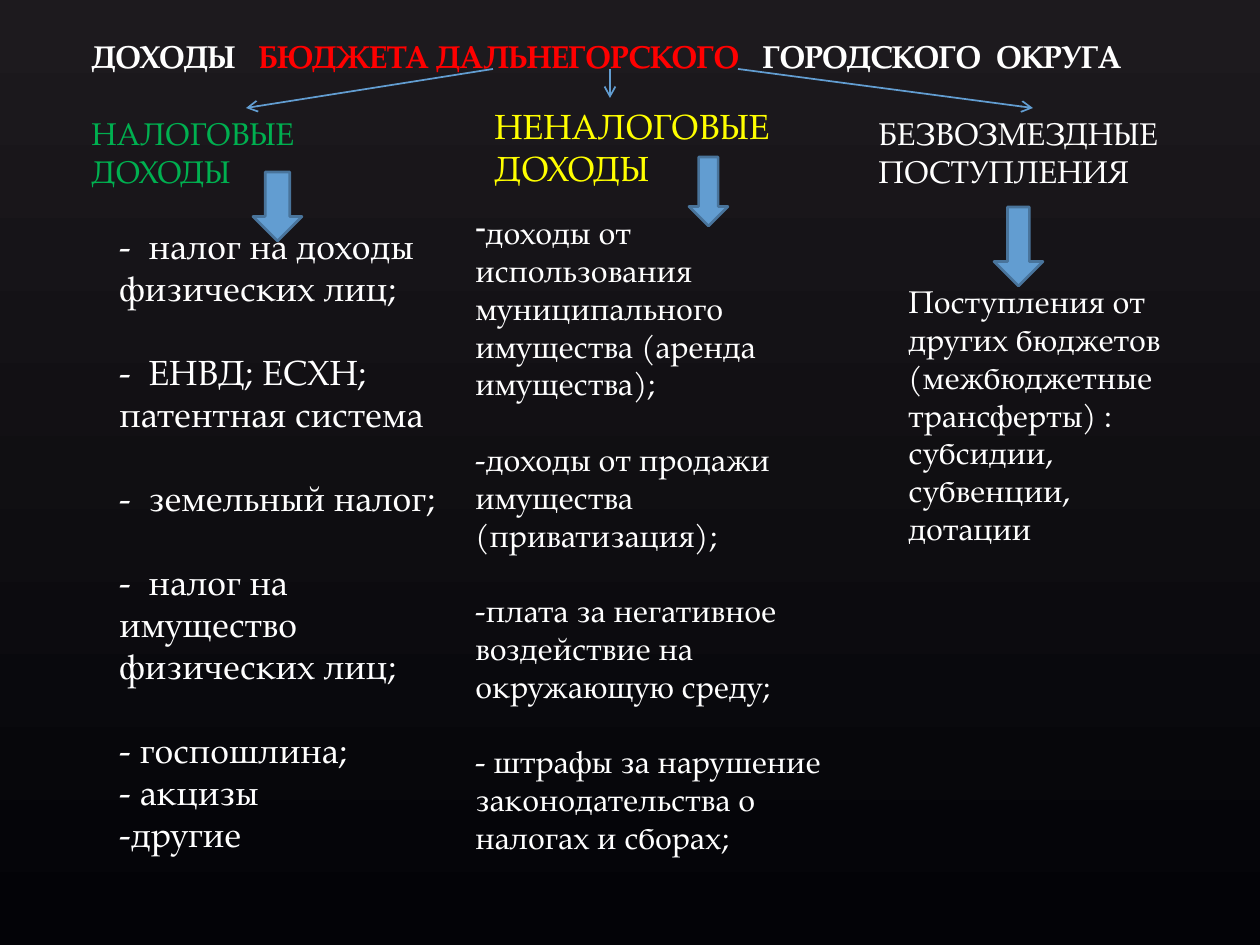
from lxml import etree
from pptx import Presentation
from pptx.dml.color import RGBColor
from pptx.enum.shapes import MSO_CONNECTOR, MSO_SHAPE
from pptx.oxml.ns import qn
from pptx.util import Pt

FONT = "TeX Gyre Pagella"
CHARCOAL = RGBColor(0x1D, 0x1A, 0x1E)
NEAR_BLACK = RGBColor(0x03, 0x03, 0x07)
WHITE = RGBColor(0xFF, 0xFF, 0xFF)
RED = RGBColor(0xFF, 0x00, 0x00)
GREEN = RGBColor(0x00, 0xB0, 0x50)
YELLOW = RGBColor(0xFF, 0xFF, 0x00)
BLUE = RGBColor(0x62, 0x9D, 0xD1)
DARK_BLUE = RGBColor(0x49, 0x74, 0x9B)

DOWN_ARROW = MSO_SHAPE.DOWN_ARROW
STRAIGHT = MSO_CONNECTOR.STRAIGHT


def px(length):
    return round(length * 914400 / 126)


def write(paragraph, text, size=18, color=WHITE, bold=False):
    for index, line in enumerate(text.split("\n")):
        if index:
            paragraph.add_line_break()
        run = paragraph.add_run()
        run.text = line
        run.font.name = FONT
        run.font.size = Pt(size)
        run.font.bold = bold
        run.font.color.rgb = color


class SlideBuilder:
    """Holds the presentation style and the slide being built."""

    def __init__(self):
        self.presentation = Presentation()
        self.presentation.slide_width = px(1260)
        self.presentation.slide_height = px(945)
        self.slide = self.presentation.slides.add_slide(self.presentation.slide_layouts[6])
        fill = self.slide.background.fill
        fill.gradient()
        fill.gradient_angle = 270
        for stop, color in zip(fill.gradient_stops, (CHARCOAL, NEAR_BLACK)):
            stop.color.rgb = color

    def text_frame(self, left, top, width, height):
        frame = self.slide.shapes.add_textbox(px(left), px(top), px(width), px(height)).text_frame
        frame.word_wrap = True
        return frame

    def text(self, box, paragraphs, gap=0, bullet=False, **style):
        frame = self.text_frame(*box)
        for index, content in enumerate(paragraphs):
            paragraph = frame.add_paragraph() if index else frame.paragraphs[0]
            if index:
                paragraph.space_before = Pt(gap)
            write(paragraph, content, **style)
        if bullet:
            properties = frame.paragraphs[0]._p.get_or_add_pPr()
            properties.set("marL", "0")
            properties.set("indent", "0")
            etree.SubElement(properties, qn("a:buFontTx"))
            etree.SubElement(properties, qn("a:buChar")).set("char", "-")

    def title(self, box, parts):
        paragraph = self.text_frame(*box).paragraphs[0]
        for content, color in parts:
            write(paragraph, content, color=color, bold=True)

    def branch(self, start_x, start_y, end_x, end_y):
        connector = self.slide.shapes.add_connector(
            STRAIGHT, px(start_x), px(start_y), px(end_x), px(end_y))
        connector.line.color.rgb = BLUE
        connector.line.width = Pt(1)
        etree.SubElement(connector.line._get_or_add_ln(), qn("a:tailEnd")).set("type", "arrow")
        etree.SubElement(connector._element.spPr, qn("a:effectLst"))

    def down_arrow(self, left, top, width, height, stem=0.5):
        arrow = self.slide.shapes.add_shape(
            DOWN_ARROW, px(left), px(top), px(width), px(height))
        arrow.shadow.inherit = False
        arrow.adjustments[0] = stem
        arrow.fill.solid()
        arrow.fill.fore_color.rgb = BLUE
        arrow.line.color.rgb = DARK_BLUE
        arrow.line.width = Pt(1.5)


def main():
    builder = SlideBuilder()
    builder.title((79, 31, 1142, 50), [
        ("ДОХОДЫ   ", WHITE),
        ("БЮДЖЕТА ДАЛЬНЕГОРСКОГО", RED),
        ("   ГОРОДСКОГО  ОКРУГА", WHITE),
    ])
    builder.text((79, 108, 344, 89), ["НАЛОГОВЫЕ ДОХОДЫ"], color=GREEN)
    builder.text((482, 98, 335, 97), ["НЕНАЛОГОВЫЕ ДОХОДЫ"], size=20, color=YELLOW)
    builder.text((866, 108, 335, 89), ["БЕЗВОЗМЕЗДНЫЕ ПОСТУПЛЕНИЯ"])

    builder.text((107, 218, 345, 640), [
        "-  налог на доходы физических лиц;",
        "-  ЕНВД; ЕСХН; патентная система",
        "-  земельный налог;",
        "-  налог на имущество физических лиц;",
        "- госпошлина;\n- акцизы\n-другие",
    ], gap=24, size=20)
    builder.text((463, 207, 403, 699), [
        "доходы от использования муниципального имущества (аренда имущества);",
        "-доходы от продажи имущества (приватизация);",
        "-плата за негативное воздействие на окружающую среду;",
        "- штрафы за нарушение законодательства о налогах и сборах;",
    ], gap=21.6, bullet=True)
    builder.text((896, 276, 295, 280), [
        "Поступления от других бюджетов (межбюджетные трансферты) : "
        "субсидии, субвенции, дотации",
    ])

    for start_x, end_x, end_y in [(493, 246, 108), (610, 610, 98), (738, 1033, 108)]:
        builder.branch(start_x, 69, end_x, end_y)
    builder.down_arrow(253, 172, 49, 69)
    builder.down_arrow(689, 157, 39, 69)
    builder.down_arrow(994, 207, 49, 79, stem=0.445)
    builder.presentation.save("out.pptx")


if __name__ == "__main__":
    main()
